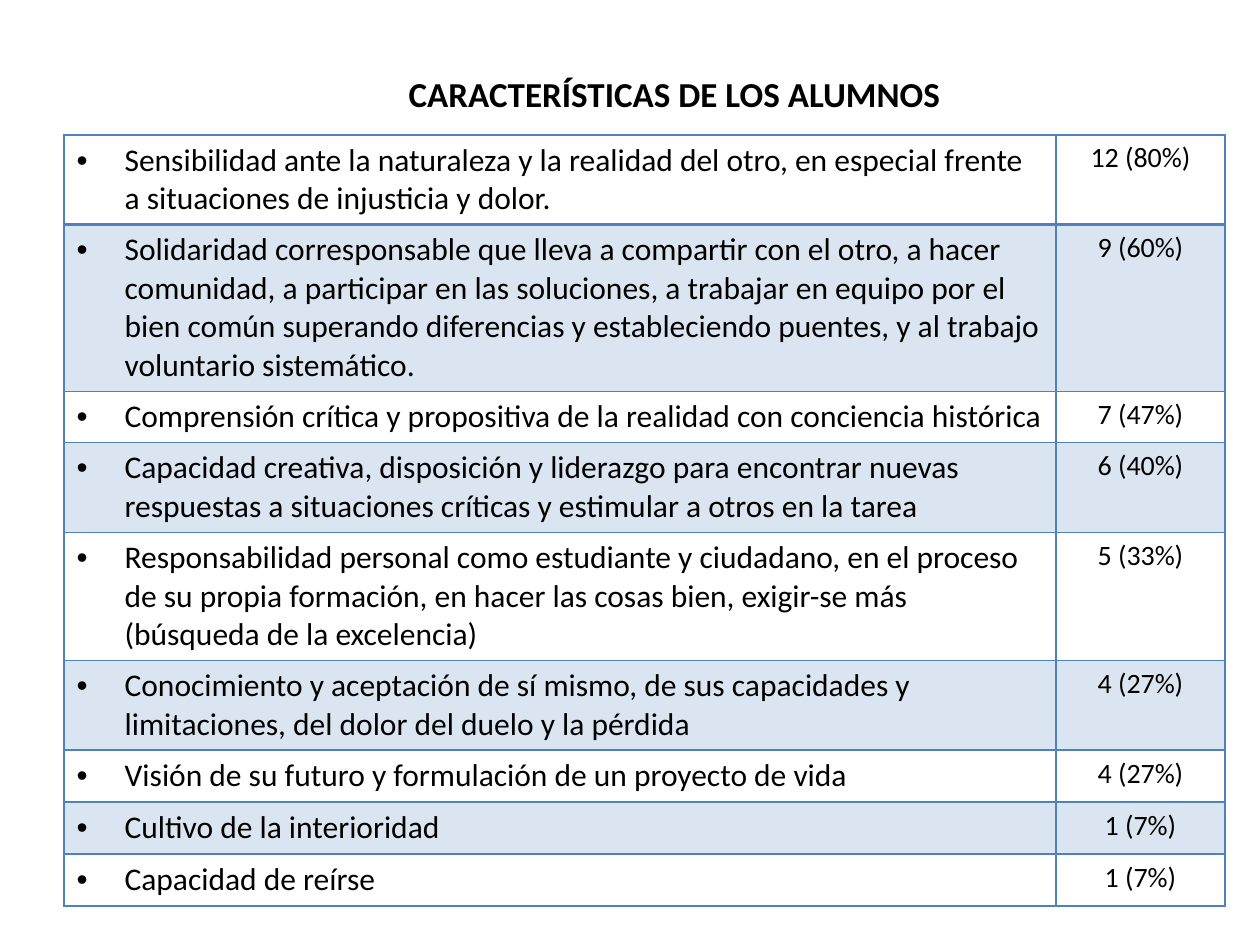
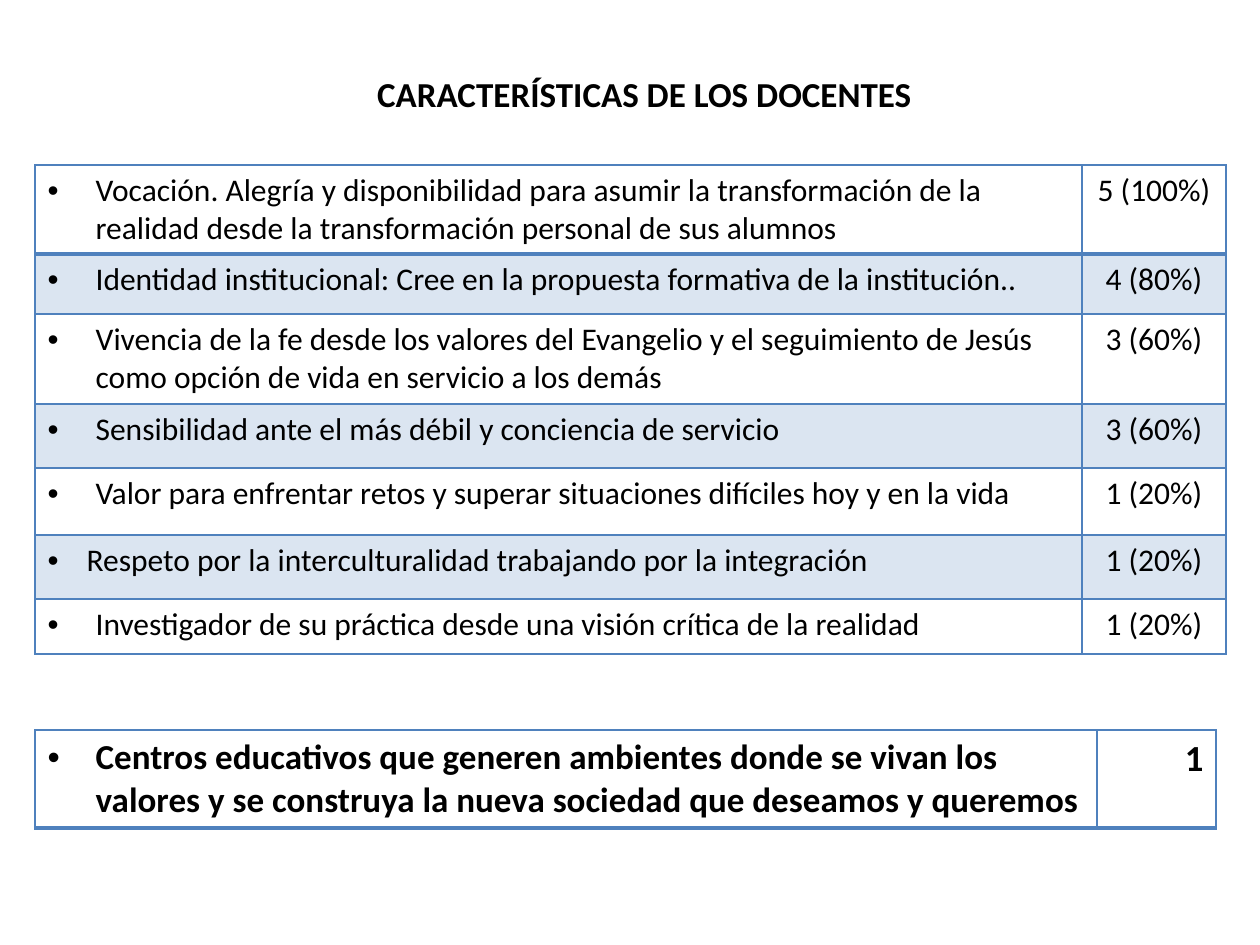
from lxml import etree
from pptx import Presentation
from pptx.dml.color import RGBColor
from pptx.enum import text
from pptx.oxml.ns import qn
from pptx.util import Inches, Pt

PX = Inches(1) / 126
FONT = "Calibri"
BLACK = "000000"
BLUE = "4F81BD"
BAND_ALPHA = 20
THIN, THICK = 1, 2
INDENT = 48
CENTER, RIGHT = text.PP_ALIGN.CENTER, text.PP_ALIGN.RIGHT

# Each row: height, characteristic, count
STUDENT_ROWS = [
    (89, "Sensibilidad ante la naturaleza y la realidad del otro, en especial frente "
         "a situaciones de injusticia y dolor.", "12 (80%)"),
    (167, "Solidaridad corresponsable que lleva a compartir con el otro, a hacer "
          "comunidad, a participar en las soluciones, a trabajar en equipo por el "
          "bien común superando diferencias y estableciendo puentes, y al trabajo "
          "voluntario sistemático.", "9 (60%)"),
    (51, "Comprensión crítica y propositiva de la realidad con conciencia histórica",
     "7 (47%)"),
    (90, "Capacidad creativa, disposición y liderazgo para encontrar nuevas "
         "respuestas a situaciones críticas y estimular a otros en la tarea", "6 (40%)"),
    (128, "Responsabilidad personal como estudiante y ciudadano, en el proceso "
          "de su propia formación, en hacer las cosas bien, exigir-se más "
          "(búsqueda de la excelencia)", "5 (33%)"),
    (89, "Conocimiento y aceptación de sí mismo, de sus capacidades y "
         "limitaciones, del dolor del duelo y la pérdida", "4 (27%)"),
    (52, "Visión de su futuro y formulación de un proyecto de vida", "4 (27%)"),
    (52, "Cultivo de la interioridad", "1 (7%)"),
    (52, "Capacidad de reírse", "1 (7%)"),
]
TEACHER_ROWS = [
    (89, "Vocación. Alegría y disponibilidad para asumir la transformación de la "
         "realidad desde la transformación personal de sus alumnos", "5 (100%)"),
    (60, "Identidad institucional: Cree en la propuesta formativa de la institución..",
     "4 (80%)"),
    (90, "Vivencia de la fe desde los valores del Evangelio y el seguimiento de Jesús "
         "como opción de vida en servicio a los demás", "3 (60%)"),
    (64, "Sensibilidad ante el más débil y conciencia de servicio", "3 (60%)"),
    (67, "Valor para enfrentar retos y superar situaciones difíciles hoy y en la vida",
     "1 (20%)"),
    (64, "Respeto por la interculturalidad trabajando por la integración", "1 (20%)"),
    (55, "Investigador de su práctica desde una visión crítica de la realidad", "1 (20%)"),
]
CENTER_ROWS = [
    (98, "Centros educativos que generen ambientes donde se vivan los valores y se "
         "construya la nueva sociedad que deseamos y queremos", "1"),
]


def px(length):
    return round(length * PX)


def color(value):
    return RGBColor.from_string(value)


def write(frame, words, size, bold=False, align=None):
    para = frame.paragraphs[0]
    para.alignment = align
    span = para.add_run()
    span.text = words
    formats = {"name": FONT, "size": Pt(size), "bold": bold}
    for name, value in formats.items():
        setattr(span.font, name, value)
    span.font.color.rgb = color(BLACK)
    return para


def add_bullet(para, indent):
    properties = para._p.get_or_add_pPr()
    properties.set("marL", str(px(indent)))
    properties.set("indent", str(-px(indent)))
    etree.SubElement(properties, qn("a:buFont"), typeface="Arial")
    etree.SubElement(properties, qn("a:buChar"), char="•")


def set_borders(cell, **widths):
    """Draw the sides L, R, T and B, thin unless a width is given."""
    properties = cell._tc.get_or_add_tcPr()
    for side in "LRTB":
        width = Pt(widths.get(side, THIN))
        line = etree.SubElement(properties, qn("a:ln" + side), w=str(width))
        fill = etree.SubElement(line, qn("a:solidFill"))
        etree.SubElement(fill, qn("a:srgbClr"), val=BLUE)


def set_band(cell, banded):
    if not banded:
        cell.fill.background()
        return
    cell.fill.solid()
    cell.fill.fore_color.rgb = color(BLUE)
    tint = cell._tc.tcPr.find(".//" + qn("a:solidFill") + "[last()]/" + qn("a:srgbClr"))
    for solid in cell._tc.tcPr.findall(qn("a:solidFill")):
        tint = solid.find(qn("a:srgbClr"))
    etree.SubElement(tint, qn("a:alpha"), val=str(BAND_ALPHA * 1000))


def add_title(page, left, words):
    box = page.shapes.add_textbox(px(left), px(66), px(863), px(55))
    frame = box.text_frame
    frame.word_wrap = True
    frame.auto_size = text.MSO_AUTO_SIZE.SHAPE_TO_FIT_TEXT
    write(frame, words, 20, bold=True, align=CENTER)


def add_ranking(page, left, top, widths, rows, size=18, count_size=18,
                bold=False, count_align=CENTER, indents=None):
    """Table of bulleted characteristics with counts; indents maps row to indent."""
    height = sum(row[0] for row in rows)
    table = page.shapes.add_table(len(rows), 2, px(left), px(top),
                                  px(sum(widths)), px(height)).table
    table.first_row = table.horz_banding = False
    for column, width in zip(table.columns, widths):
        column.width = px(width)
    for index, (row_height, words, count) in enumerate(rows):
        table.rows[index].height = px(row_height)
        label, value = table.rows[index].cells
        para = write(label.text_frame, words, size, bold)
        add_bullet(para, (indents or {}).get(index, INDENT))
        write(value.text_frame, count, count_size, bold, count_align)
        for cell in (label, value):
            set_borders(cell, T=THICK if index == 1 else THIN,
                        B=THICK if index == 0 else THIN)
            set_band(cell, index % 2 == 1)


def main():
    deck = Presentation()
    deck.slide_width, deck.slide_height = px(1260), px(945)
    blank = deck.slide_layouts[6]

    students = deck.slides.add_slide(blank)
    add_ranking(students, 64, 135, (992, 169), STUDENT_ROWS, count_size=16)
    add_title(students, 243, "CARACTERÍSTICAS DE LOS ALUMNOS")

    teachers = deck.slides.add_slide(blank)
    add_ranking(teachers, 35, 165, (1047, 144), TEACHER_ROWS, indents={5: 39})
    add_ranking(teachers, 35, 730, (1062, 119), CENTER_ROWS, size=20,
                count_size=21, bold=True, count_align=RIGHT)
    add_title(teachers, 213, "CARACTERÍSTICAS DE LOS DOCENTES")

    deck.save("out.pptx")


if __name__ == "__main__":
    main()
